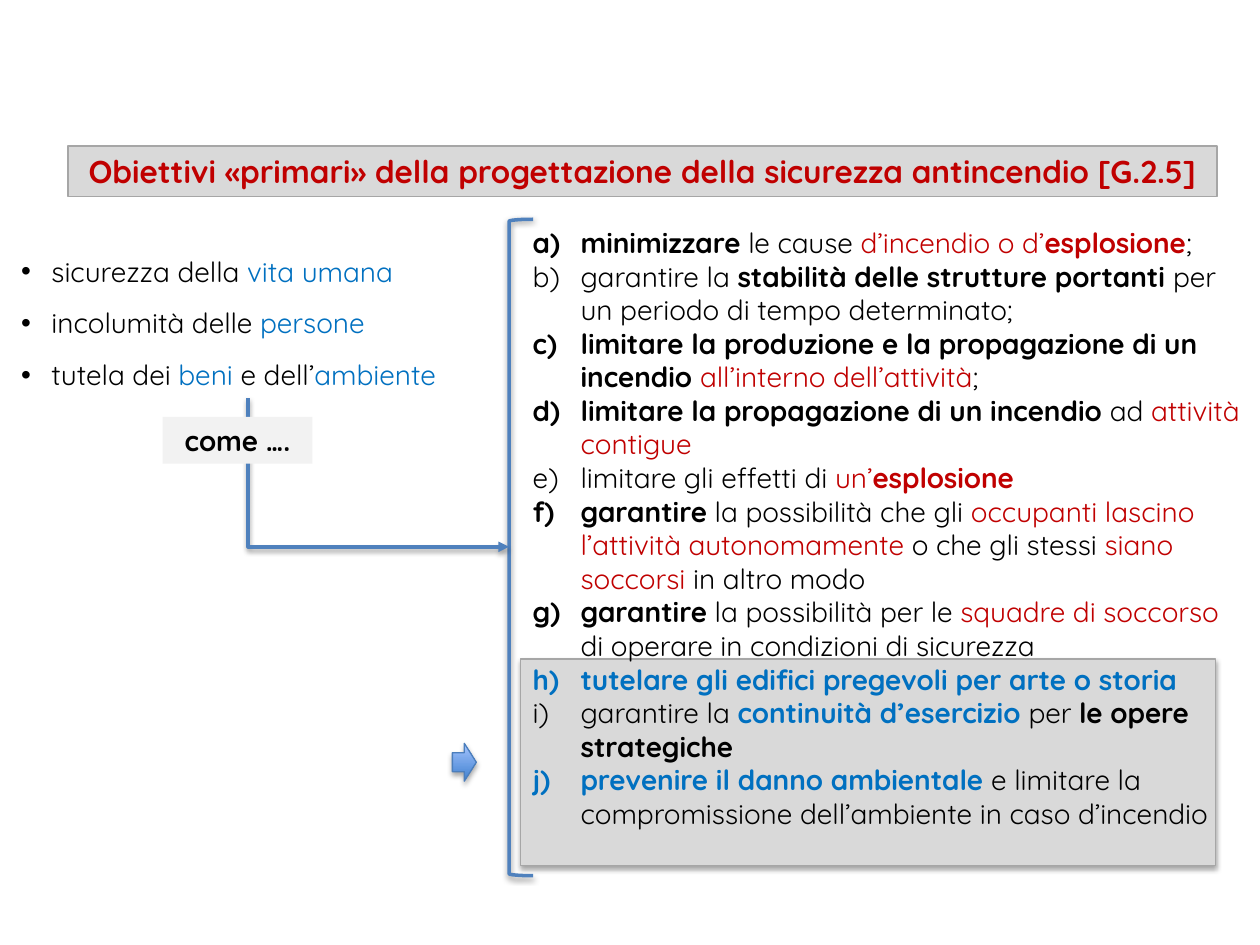
from dataclasses import dataclass

from lxml import etree
from pptx import Presentation
from pptx.dml.color import RGBColor
from pptx.enum import shapes, text
from pptx.oxml.ns import qn
from pptx.util import Inches, Pt


@dataclass(frozen=True)
class Theme:
    font: str = "Quicksand"
    body: int = 16
    title: int = 18
    black: str = "000000"
    red: str = "C00000"
    blue: str = "0070C0"
    panel: str = "D9D9D9"
    panel_line: str = "A6A6A6"
    label: str = "F2F2F2"
    accent: str = "4F81BD"
    arrow_line: str = "4B7EBC"
    arrow_dark: str = "3F80CE"
    arrow_light: str = "A4C4FF"


THEME = Theme()
COLOURS = {"k": THEME.black, "r": THEME.red, "b": THEME.blue}

# Each span is (text, style): k black, r red, b blue; a trailing + means bold.
AIMS = [
    [("sicurezza della ", "k"), ("vita umana", "b")],
    [("incolumità delle ", "k"), ("persone", "b")],
    [("tutela dei ", "k"), ("beni", "b"), (" e dell’", "k"), ("ambiente", "b")],
]
MEASURES = [
    [("minimizzare", "k+"), (" le cause ", "k"), ("d’incendio o d’", "r"),
     ("esplosione", "r+"), (";", "k")],
    [("garantire la ", "k"), ("stabilità delle strutture portanti ", "k+"),
     ("per un periodo di tempo determinato;", "k")],
    [("limitare la produzione e la propagazione di un incendio ", "k+"),
     ("all’interno dell’attività", "r"), (";", "k")],
    [("limitare la propagazione di un incendio", "k+"), (" ad ", "k"),
     ("attività contigue", "r")],
    [("limitare gli effetti di ", "k"), ("un’", "r"), ("esplosione", "r+")],
    [("garantire", "k+"), (" la possibilità che gli ", "k"),
     ("occupanti lascino l’attività autonomamente", "r"),
     (" o che gli stessi ", "k"), ("siano soccorsi ", "r"), ("in altro modo", "k")],
    [("garantire", "k+"), (" la possibilità per le ", "k"),
     ("squadre di soccorso ", "r"), ("di operare in condizioni di sicurezza", "k")],
    [("tutelare gli edifici pregevoli per arte o storia", "b+")],
    [("garantire la ", "k"), ("continuità d’esercizio ", "b+"), ("per ", "k"),
     ("le opere strategiche", "k+")],
    [("prevenire il danno ambientale ", "b+"),
     ("e limitare la compromissione dell’ambiente in caso d’incendio", "k")],
]


def rgb(colour):
    return RGBColor.from_string(colour)


def set_line(line, colour, width):
    line.color.rgb = rgb(colour)
    line.width = Pt(width)


def set_effects(shape, alpha=0, distance=1.8):
    """Replace the theme shadow by a downward one, or by none if alpha is 0."""
    effects = etree.SubElement(shape._element.spPr, qn("a:effectLst"))
    if alpha:
        shadow = etree.SubElement(
            effects, qn("a:outerShdw"), blurRad=str(Pt(3.1)),
            dist=str(Pt(distance)), dir="5400000", rotWithShape="0")
        colour = etree.SubElement(shadow, qn("a:srgbClr"), val=THEME.black)
        etree.SubElement(colour, qn("a:alpha"), val=str(alpha * 1000))


def add_shape(slide, kind, place, fill=None, line=None, width=0.75, alpha=0, distance=1.8):
    shape = slide.shapes.add_shape(kind, *map(Inches, place))
    if fill:
        shape.fill.solid()
        shape.fill.fore_color.rgb = rgb(fill)
    else:
        shape.fill.background()
    if line:
        set_line(shape.line, line, width)
    else:
        shape.line.fill.background()
    set_effects(shape, alpha, distance)
    return shape


def add_spans(para, spans, size):
    for words, style in spans:
        span = para.add_run()
        span.text = words
        span.font.name = THEME.font
        span.font.size = Pt(size)
        span.font.bold = style.endswith("+")
        span.font.color.rgb = rgb(COLOURS[style[0]])


def write_label(shape, words, style, size, wrap):
    frame = shape.text_frame
    frame.word_wrap = wrap
    frame.vertical_anchor = text.MSO_ANCHOR.TOP
    para = frame.paragraphs[0]
    para.alignment = text.PP_ALIGN.CENTER
    add_spans(para, [(words, style)], size)


def add_list(slide, place, items, indent, tag, **marker):
    """Add a text box whose paragraphs hang behind the given bullet element."""
    frame = slide.shapes.add_textbox(*map(Inches, place)).text_frame
    frame.word_wrap = True
    for index, spans in enumerate(items):
        para = frame.add_paragraph() if index else frame.paragraphs[0]
        props = para._p.get_or_add_pPr()
        props.set("marL", str(Inches(indent)))
        props.set("indent", str(-Inches(indent)))
        if tag == "a:buChar":
            etree.SubElement(props, qn("a:buFont"), typeface="Arial")
        etree.SubElement(props, qn(tag), **marker)
        add_spans(para, spans, THEME.body)


def add_corner_arrow(slide, start, end):
    """Draw an arrow that goes down from start, then right to end."""
    across, down = end[0] - start[0], end[1] - start[1]
    middle_x, middle_y = (start[0] + end[0]) / 2, (start[1] + end[1]) / 2
    # The preset bends the other way: mirror it and turn it by 270 degrees.
    arrow = slide.shapes.add_connector(
        shapes.MSO_CONNECTOR.ELBOW,
        Inches(middle_x + down / 2), Inches(middle_y - across / 2),
        Inches(middle_x - down / 2), Inches(middle_y + across / 2))
    props = arrow._element.spPr
    props.find(qn("a:xfrm")).set("rot", "16200000")
    props.find(qn("a:prstGeom")).set("prst", "bentConnector2")
    set_line(arrow.line, THEME.accent, 2)
    etree.SubElement(props.find(qn("a:ln")), qn("a:tailEnd"), type="triangle")
    set_effects(arrow, 38, 1.6)


def add_block_arrow(slide, place):
    arrow = add_shape(slide, shapes.MSO_SHAPE.RIGHT_ARROW, place,
                      line=THEME.arrow_line, alpha=35)
    arrow.fill.gradient()
    arrow.fill.gradient_angle = 90
    for stop, colour in zip(arrow.fill.gradient_stops,
                            (THEME.arrow_dark, THEME.arrow_light)):
        stop.color.rgb = rgb(colour)


def main():
    deck = Presentation()
    deck.slide_width, deck.slide_height = Inches(10), Inches(7.5)
    slide = deck.slides.add_slide(deck.slide_layouts[6])
    rectangle = shapes.MSO_SHAPE.RECTANGLE

    add_shape(slide, rectangle, (4.13, 5.23, 5.52, 1.64),
              THEME.panel, THEME.panel_line, alpha=35)
    for row, spans in enumerate(AIMS):
        add_list(slide, (0.07, 1.97 + 0.41 * row, 3.8, 0.37), [spans],
                 0.24, "a:buChar", char="•")
    title = add_shape(slide, rectangle, (0.54, 1.16, 9.12, 0.4),
                      THEME.panel, THEME.panel_line)
    write_label(title, "Obiettivi «primari» della progettazione della sicurezza "
                "antincendio [G.2.5]", "r+", THEME.title, wrap=False)
    add_list(slide, (4.13, 1.74, 5.87, 5.49), MEASURES,
             0.38, "a:buAutoNum", type="alphaLcParenR")
    add_shape(slide, shapes.MSO_SHAPE.LEFT_BRACKET, (4.04, 1.74, 0.19, 5.21),
              line=THEME.accent, width=2, alpha=38, distance=1.6)
    add_block_arrow(slide, (3.59, 5.9, 0.19, 0.3))
    add_corner_arrow(slide, (1.97, 3.16), (4.04, 4.34))
    label = add_shape(slide, rectangle, (1.29, 3.31, 1.19, 0.37), THEME.label)
    write_label(label, "come ….", "k+", THEME.body, wrap=True)

    deck.save("out.pptx")


if __name__ == "__main__":
    main()
